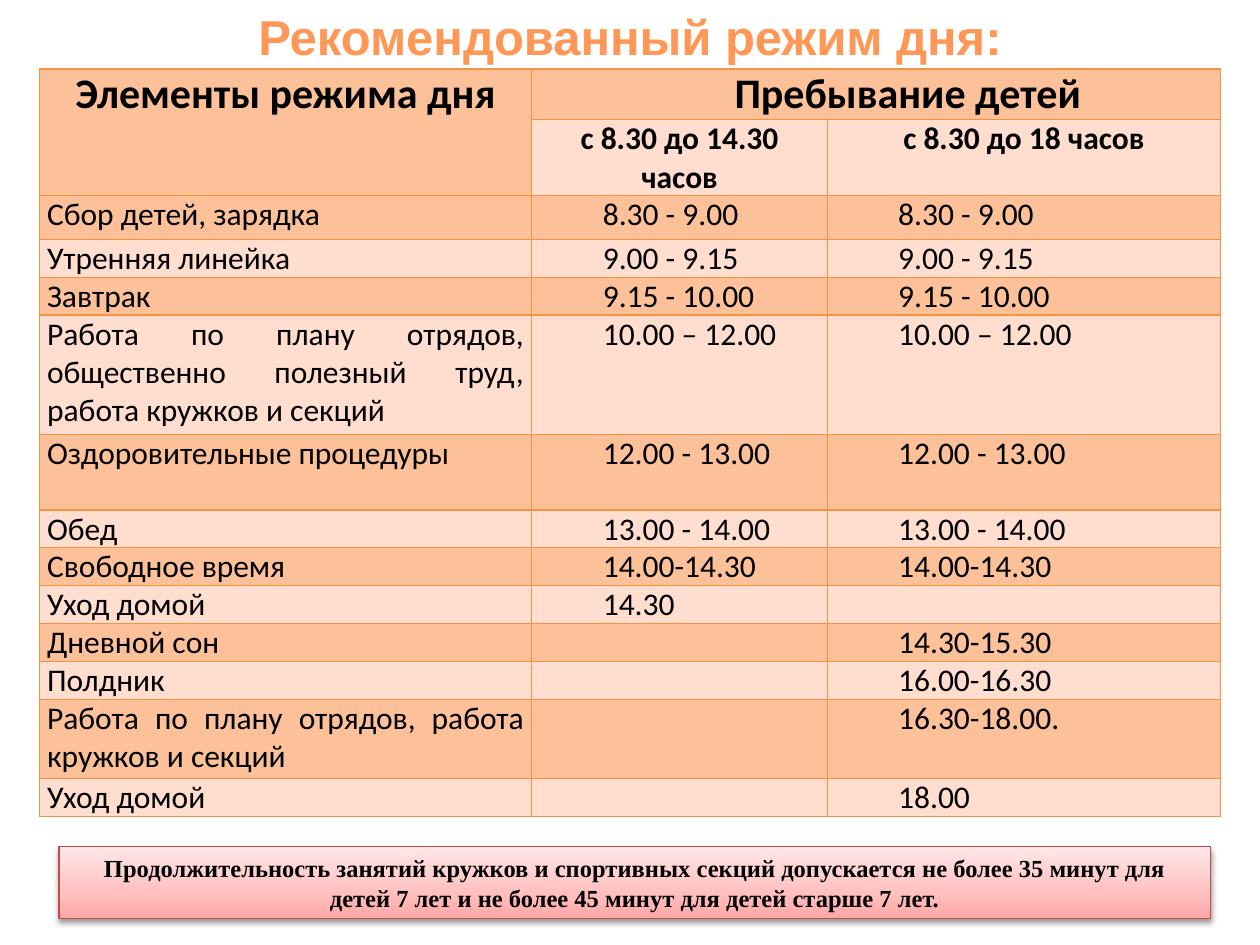
from lxml import etree
from pptx import Presentation
from pptx.dml.color import RGBColor
from pptx.enum.shapes import MSO_SHAPE
from pptx.enum.text import MSO_ANCHOR, PP_ALIGN
from pptx.oxml import parse_xml
from pptx.oxml.ns import nsdecls, qn
from pptx.util import Cm, Pt

COLORS = {
    "text": "000000",
    "band_dark": "FCC198",
    "band_light": "FFDDCF",
    "grid": "F69240",
    "note_line": "BF4C48",
}
TITLE_GRADIENT = [(0, "9D4700"), (78, "FF9856"), (100, "FFF5F1")]
NOTE_GRADIENT = [(0, "FFA6A5"), (35, "FFC0BF"), (100, "FFE7E7")]

TITLE = "Рекомендованный режим дня:"
NOTE = (
    "Продолжительность занятий кружков и спортивных секций допускается "
    "не более 35 минут для детей 7 лет и не более 45 минут для детей старше 7 лет."
)
SCHEDULE = [
    ("Элементы режима дня", "Пребывание детей", "", 1.02),
    ("", "с 8.30 до 14.30 часов", "с 8.30 до 18 часов", 1.52),
    ("Сбор детей, зарядка", "8.30 - 9.00", "8.30 - 9.00", 0.89),
    ("Утренняя линейка", "9.00 - 9.15", "9.00 - 9.15", 0.76),
    ("Завтрак", "9.15 - 10.00", "9.15 - 10.00", 0.76),
    ("Работа по плану отрядов, общественно полезный труд, работа кружков и секций",
     "10.00 – 12.00", "10.00 – 12.00", 2.41),
    ("Оздоровительные процедуры", "12.00 - 13.00", "12.00 - 13.00", 1.52),
    ("Обед", "13.00 - 14.00", "13.00 - 14.00", 0.76),
    ("Свободное время", "14.00-14.30", "14.00-14.30", 0.76),
    ("Уход домой", "14.30", "", 0.76),
    ("Дневной сон", "", "14.30-15.30", 0.76),
    ("Полдник", "", "16.00-16.30", 0.76),
    ("Работа по плану отрядов, работа кружков и секций", "", "16.30-18.00.", 1.6),
    ("Уход домой", "", "18.00", 0.76),
]
COLUMN_SHARES = (0.417, 0.25, 0.333)
HEADER_ROWS = 2


def rgb(name):
    return RGBColor.from_string(COLORS[name])


def set_gradient(fill, owner, stops, angle):
    fill.background()
    stop_xml = "".join(
        f'<a:gs pos="{share * 1000}"><a:srgbClr val="{color}"/></a:gs>'
        for share, color in stops
    )
    gradient = parse_xml(
        f'<a:gradFill {nsdecls("a")} rotWithShape="1"><a:gsLst>{stop_xml}</a:gsLst>'
        f'<a:lin ang="{angle * 60000}" scaled="0"/></a:gradFill>'
    )
    owner.replace(owner.find(qn("a:noFill")), gradient)


def style_paragraph(paragraph, font_name, size, bold, align):
    paragraph.alignment = align
    for run in paragraph.runs:
        run.font.name = font_name
        run.font.size = Pt(size)
        run.font.bold = bold
        run.font.color.rgb = rgb("text")


def add_title(slide, left, top, width, height):
    title = slide.shapes.add_textbox(left, top, width, height)
    frame = title.text_frame
    frame.word_wrap = True
    frame.vertical_anchor = MSO_ANCHOR.MIDDLE
    frame.text = TITLE
    heading = frame.paragraphs[0]
    style_paragraph(heading, "Arial", 28, True, PP_ALIGN.CENTER)
    run = heading.runs[0]
    set_gradient(run.font.fill, run.font.fill and run._r.get_or_add_rPr(), TITLE_GRADIENT, 90)


def add_borders(cell):
    properties = cell._tc.get_or_add_tcPr()
    for index, side in enumerate(("lnL", "lnR", "lnT", "lnB")):
        properties.insert(index, parse_xml(
            f'<a:{side} {nsdecls("a")} w="{Pt(0.75)}"><a:solidFill>'
            f'<a:srgbClr val="{COLORS["grid"]}"/></a:solidFill></a:{side}>'
        ))


def fill_cell(cell, text, row, column):
    cell.margin_left = cell.margin_right = Cm(0.16)
    cell.margin_top = cell.margin_bottom = 0
    cell.fill.solid()
    cell.fill.fore_color.rgb = rgb("band_light" if row % 2 else "band_dark")
    add_borders(cell)
    cell.text_frame.text = text
    paragraph = cell.text_frame.paragraphs[0]
    is_header = row < HEADER_ROWS
    style_paragraph(
        paragraph, "Calibri", 24 if row == 0 else 18, is_header,
        PP_ALIGN.CENTER if is_header else PP_ALIGN.JUSTIFY,
    )
    if column > 0 and row != 1:
        indent = paragraph._p.get_or_add_pPr()
        indent.set("marL", "0")
        indent.set("indent", str(Cm(1.27)))


def add_schedule(slide, left, top, width):
    height = Cm(sum(entry[-1] for entry in SCHEDULE))
    table = slide.shapes.add_table(
        len(SCHEDULE), len(COLUMN_SHARES), left, top, width, height
    ).table
    for column, share in zip(table.columns, COLUMN_SHARES):
        column.width = int(width * share)
    for row, (*texts, row_height) in enumerate(SCHEDULE):
        table.rows[row].height = Cm(row_height)
        for column, text in enumerate(texts):
            fill_cell(table.cell(row, column), text, row, column)
    table.cell(0, 0).merge(table.cell(1, 0))
    table.cell(0, 1).merge(table.cell(0, 2))


def add_note(slide, left, top, width, height):
    note = slide.shapes.add_shape(MSO_SHAPE.RECTANGLE, left, top, width, height)
    note.shadow.inherit = False
    set_gradient(note.fill, note._element.spPr, NOTE_GRADIENT, 270)
    note.line.color.rgb = rgb("note_line")
    note.line.width = Pt(0.75)
    effects = note._element.spPr.find(qn("a:effectLst"))
    shadow = etree.SubElement(
        effects, qn("a:outerShdw"),
        blurRad="40000", dist="20000", dir="5400000", rotWithShape="0",
    )
    shadow_color = etree.SubElement(shadow, qn("a:srgbClr"), val=COLORS["text"])
    etree.SubElement(shadow_color, qn("a:alpha"), val="38000")
    frame = note.text_frame
    frame.word_wrap = True
    frame.vertical_anchor = MSO_ANCHOR.MIDDLE
    frame.text = NOTE
    style_paragraph(frame.paragraphs[0], "Times New Roman", 14, True, PP_ALIGN.CENTER)


def main():
    presentation = Presentation()
    presentation.slide_width = Cm(25.4)
    presentation.slide_height = Cm(19.05)
    slide = presentation.slides.add_slide(presentation.slide_layouts[6])
    add_title(slide, 0, 0, presentation.slide_width, Cm(1.45))
    add_schedule(slide, Cm(0.79), Cm(1.39), Cm(23.82))
    add_note(slide, Cm(1.19), Cm(17.07), Cm(23.22), Cm(1.45))
    presentation.save("out.pptx")


if __name__ == "__main__":
    main()
